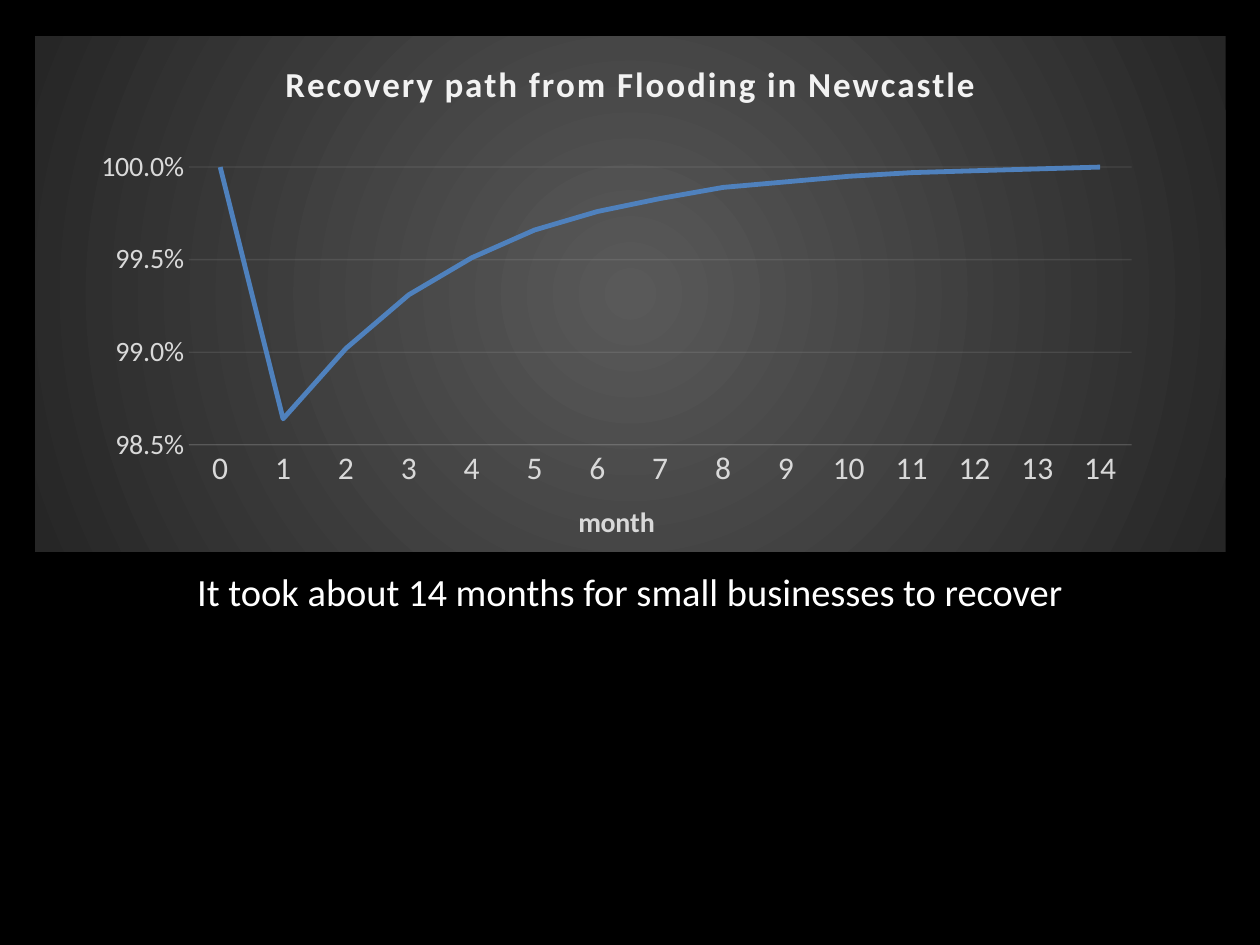
from lxml.etree import SubElement
from pptx import Presentation
from pptx.chart.data import CategoryChartData
from pptx.dml.color import RGBColor
from pptx.enum.chart import XL_CHART_TYPE, XL_TICK_MARK
from pptx.enum.text import MSO_AUTO_SIZE, PP_ALIGN
from pptx.oxml import parse_xml
from pptx.oxml.ns import nsdecls, qn
from pptx.util import Cm, Pt

FONT = "Calibri"
BLACK = RGBColor(0x00, 0x00, 0x00)
WHITE = RGBColor(0xFF, 0xFF, 0xFF)
PALE = RGBColor(0xF2, 0xF2, 0xF2)
LABEL = RGBColor(0xD9, 0xD9, 0xD9)
BLUE = RGBColor(0x4F, 0x81, 0xBD)
PANEL_CENTRE = RGBColor(0x59, 0x59, 0x59)
PANEL_EDGE = RGBColor(0x26, 0x26, 0x26)

RECOVERY = [1, 0.9864, 0.9902, 0.9931, 0.9951, 0.9966, 0.9976, 0.9983,
            0.9989, 0.9992, 0.9995, 0.9997, 0.9998, 0.9999, 1]


def style_font(font, size, color, bold=False):
    font.name = FONT
    font.size = Pt(size)
    font.bold = bold
    font.color.rgb = color


def add_text(frame, text, size, color, bold=False, align=PP_ALIGN.CENTER,
             spacing=0, space_after=0):
    para = frame.paragraphs[0]
    para.alignment = align
    para.space_after = Pt(space_after)
    span = para.add_run()
    span.text = text
    style_font(span.font, size, color, bold)
    if spacing:
        span._r.get_or_add_rPr().set("spc", str(spacing))


def style_faint_line(line, owner):
    """Draw a thin line at 10 % opacity."""
    line.width = Pt(0.75)
    line.color.rgb = PALE
    for ln in owner.iter(qn("a:ln")):
        for color in ln.iter(qn("a:srgbClr")):
            SubElement(color, qn("a:alpha"), val="10000")


def style_axis(axis, size):
    axis.major_tick_mark = XL_TICK_MARK.NONE
    axis.minor_tick_mark = XL_TICK_MARK.NONE
    style_font(axis.tick_labels.font, size, LABEL)


def fill_panel(chart):
    """Give the chart area a circular gradient and no outline."""
    panel = parse_xml(
        f'<c:spPr {nsdecls("c", "a")}><a:gradFill><a:gsLst>'
        f'<a:gs pos="0"><a:srgbClr val="{PANEL_CENTRE}"/></a:gs>'
        f'<a:gs pos="100000"><a:srgbClr val="{PANEL_EDGE}"/></a:gs></a:gsLst>'
        '<a:path path="circle"><a:fillToRect l="50000" t="50000" r="50000" b="50000"/>'
        '</a:path></a:gradFill><a:ln><a:noFill/></a:ln></c:spPr>')
    chart._chartSpace.find(qn("c:chart")).addnext(panel)


def place_plot(chart, **edges):
    """Fix the inner plot area as fractions of the chart."""
    plot_area = chart._chartSpace.find(qn("c:chart")).find(qn("c:plotArea"))
    for old in plot_area.findall(qn("c:layout")):
        plot_area.remove(old)
    layout = parse_xml(f'<c:layout {nsdecls("c")}><c:manualLayout/></c:layout>')
    settings = {"layoutTarget": "inner", "xMode": "edge", "yMode": "edge", **edges}
    for name, value in settings.items():
        SubElement(layout[0], qn(f"c:{name}"), val=str(value))
    plot_area.insert(0, layout)


def add_recovery_chart(page):
    data = CategoryChartData(number_format="0.0%")
    data.categories = [str(month) for month in range(len(RECOVERY))]
    data.add_series("Series 1", RECOVERY)
    chart = page.shapes.add_chart(XL_CHART_TYPE.LINE, Cm(0.71), Cm(0.73),
                                  Cm(24), Cm(10.39), data).chart
    style_font(chart.font, 10, BLACK)
    chart.has_legend = False
    fill_panel(chart)
    place_plot(chart, x=0.129, y=0.254, w=0.792, h=0.539)
    add_text(chart.chart_title.text_frame, "Recovery path from Flooding in Newcastle",
             20, PALE, bold=True, spacing=100)

    # Month axis
    months = chart.category_axis
    style_axis(months, 18)
    style_faint_line(months.format.line, months._element)
    add_text(months.axis_title.text_frame, "month", 16, LABEL, bold=True)

    # Percentage axis with gridlines
    percent = chart.value_axis
    style_axis(percent, 16)
    percent.minimum_scale, percent.maximum_scale, percent.major_unit = 0.985, 1, 0.005
    percent.tick_labels.number_format = "0.0%"
    percent.tick_labels.number_format_is_linked = False
    style_faint_line(percent.major_gridlines.format.line, percent._element)
    percent.format.line.fill.background()

    # Recovery line
    chart.plots[0].vary_by_categories = False
    series = chart.plots[0].series[0]
    series.smooth = False
    series.format.line.width = Pt(2.75)
    series.format.line.color.rgb = BLUE


def add_caption(page, text):
    box = page.shapes.add_textbox(Cm(1.9), Cm(11.33), Cm(21.6), Cm(1.19))
    box.text_frame.word_wrap = True
    box.text_frame.auto_size = MSO_AUTO_SIZE.SHAPE_TO_FIT_TEXT
    add_text(box.text_frame, text, 22, WHITE, space_after=20)


def main():
    deck = Presentation()
    deck.slide_width, deck.slide_height = Cm(25.4), Cm(19.05)
    page = deck.slides.add_slide(deck.slide_layouts[6])
    page.background.fill.solid()
    page.background.fill.fore_color.rgb = BLACK
    add_recovery_chart(page)
    add_caption(page, "It took about 14 months for small businesses to recover")
    deck.save("out.pptx")


if __name__ == "__main__":
    main()
